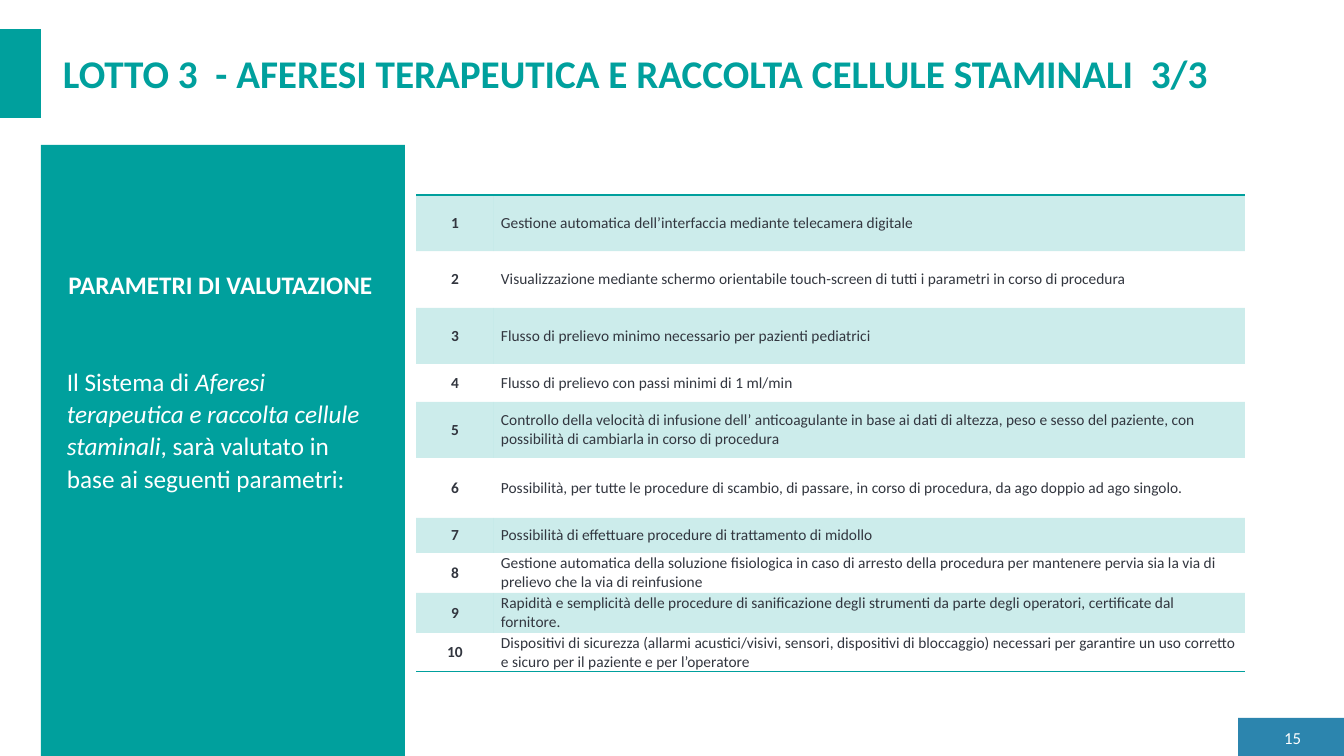
import pptx
import pptx.dml.color
import pptx.enum.shapes
import pptx.enum.text
import pptx.oxml
import pptx.oxml.ns
import pptx.util

SLIDE_WIDTH, SLIDE_HEIGHT = 1344, 756
EMU_PER_PX = 12192000 / SLIDE_WIDTH
TEAL, BLUE, WHITE, INK = "00A09D", "2C85AE", "FFFFFF", "32363F"
PLAIN_TABLE_STYLE = "{2D5ABB26-0587-4C30-8999-92F81FD0307C}"
ALIGN = pptx.enum.text.PP_ALIGN
MIDDLE = pptx.enum.text.MSO_ANCHOR.MIDDLE

PARAMETERS = [
    (56, "Gestione automatica dell’interfaccia mediante telecamera digitale"),
    (57, "Visualizzazione mediante schermo orientabile touch-screen di tutti i parametri in corso di procedura"),
    (56, "Flusso di prelievo minimo necessario per pazienti pediatrici"),
    (38, "Flusso di prelievo con passi minimi di 1 ml/min"),
    (56, "Controllo della velocità di infusione dell’ anticoagulante in base ai dati di altezza, peso e sesso "
         "del paziente, con possibilità di cambiarla in corso di procedura"),
    (60, "Possibilità, per tutte le procedure di scambio, di passare, in corso di procedura, "
         "da ago doppio ad ago singolo."),
    (35, "Possibilità di effettuare procedure di trattamento di midollo"),
    (40, "Gestione automatica della soluzione fisiologica in caso di arresto della procedura per mantenere "
         "pervia sia la via di prelievo che la via di reinfusione"),
    (40, "Rapidità e semplicità delle procedure di sanificazione degli strumenti da parte degli operatori, "
         "certificate dal fornitore."),
    (39, "Dispositivi di sicurezza (allarmi acustici/visivi, sensori, dispositivi di bloccaggio) necessari "
         "per garantire un uso corretto e sicuro per il paziente e per l’operatore"),
]


def px(length):
    return pptx.util.Emu(round(length * EMU_PER_PX))


def color(code):
    return pptx.dml.color.RGBColor.from_string(code)


def format_run(run, size, code, bold=False):
    run.font.name = "Calibri"
    run.font.size = pptx.util.Pt(size)
    run.font.color.rgb = color(code)
    run.font.bold = bold


def add_block(slide, left, top, width, height, code):
    block = slide.shapes.add_shape(
        pptx.enum.shapes.MSO_SHAPE.RECTANGLE, px(left), px(top), px(width), px(height))
    block.shadow.inherit = False
    block.fill.solid()
    block.fill.fore_color.rgb = color(code)
    block.line.fill.background()


def add_text(slide, left, top, width, height, pieces, size, code, bold=False, align=ALIGN.LEFT, wrap=True):
    frame = slide.shapes.add_textbox(px(left), px(top), px(width), px(height)).text_frame
    frame.word_wrap = wrap
    paragraph = frame.paragraphs[0]
    paragraph.alignment = align
    for piece in pieces:
        run = paragraph.add_run()
        run.text = piece
        format_run(run, size, code, bold)
    return frame


def add_rule(cell, side):
    rule = pptx.oxml.parse_xml(
        f'<a:{side} {pptx.oxml.ns.nsdecls("a")} w="12700"><a:solidFill>'
        f'<a:srgbClr val="{TEAL}"/></a:solidFill></a:{side}>')
    cell._tc.get_or_add_tcPr().insert(0, rule)


def tint(cell):
    cell.fill.solid()
    cell.fill.fore_color.rgb = color(TEAL)
    shade = cell._tc.tcPr.find(".//" + pptx.oxml.ns.qn("a:srgbClr"))
    shade.append(pptx.oxml.parse_xml(f'<a:alpha {pptx.oxml.ns.nsdecls("a")} val="20000"/>'))


def fill_cell(cell, text, margin, is_number):
    cell.margin_left = cell.margin_right = px(margin)
    cell.margin_top = cell.margin_bottom = 0
    cell.vertical_anchor = MIDDLE
    cell.text_frame.text = text
    paragraph = cell.text_frame.paragraphs[0]
    paragraph.space_after = pptx.util.Pt(10)
    if is_number:
        paragraph.alignment = ALIGN.CENTER
        paragraph.space_before = pptx.util.Pt(12)
    format_run(paragraph.runs[0], 11, INK, is_number)


def add_parameters(slide, left, top, widths):
    height = sum(row_height for row_height, _ in PARAMETERS)
    table = slide.shapes.add_table(
        len(PARAMETERS), len(widths), px(left), px(top), px(sum(widths)), px(height)).table
    table.first_row = table.horz_banding = False
    table._tbl.tblPr.find(pptx.oxml.ns.qn("a:tableStyleId")).text = PLAIN_TABLE_STYLE
    for column, width in zip(table.columns, widths):
        column.width = px(width)
    for index, (row_height, description) in enumerate(PARAMETERS):
        row = table.rows[index]
        row.height = px(row_height)
        number_cell, description_cell = row.cells
        fill_cell(number_cell, str(index + 1), 5, True)
        fill_cell(description_cell, description, 7, False)
        for cell in (number_cell, description_cell):
            if index % 2 == 0:
                tint(cell)
            else:
                cell.fill.background()
            if index == 0:
                add_rule(cell, "lnT")
            if index == len(PARAMETERS) - 1:
                add_rule(cell, "lnB")


def main():
    deck = pptx.Presentation()
    deck.slide_width, deck.slide_height = px(SLIDE_WIDTH), px(SLIDE_HEIGHT)
    slide = deck.slides.add_slide(deck.slide_layouts[6])

    add_block(slide, 1238, 718, 106, 38, BLUE)
    page_number = add_text(slide, 1270, 726, 41, 23, ["15"], 12, WHITE, align=ALIGN.RIGHT)
    page_number.vertical_anchor = MIDDLE

    add_block(slide, 41, 145, 364, 611, TEAL)
    introduction = add_text(
        slide, 57, 359, 331, 292,
        ["Il Sistema di ", "Aferesi terapeutica e raccolta cellule staminali",
         ", sarà valutato in base ai seguenti parametri:"], 18, WHITE)
    introduction.paragraphs[0].line_spacing = 1.07
    introduction.paragraphs[0].space_after = pptx.util.Pt(8)
    introduction.paragraphs[0].runs[1].font.italic = True

    heading = add_text(slide, 57, 264, 327, 103, ["PARAMETRI DI VALUTAZIONE"], 18, WHITE,
                       bold=True, align=ALIGN.CENTER, wrap=False)
    heading.paragraphs[0].space_before = pptx.util.Pt(12)
    heading.paragraphs[0].space_after = pptx.util.Pt(10)

    add_text(slide, 53, 44, 1241, 57,
             ["LOTTO 3  - AFERESI TERAPEUTICA E RACCOLTA CELLULE STAMINALI  3/3"], 28, TEAL, bold=True)
    add_parameters(slide, 416, 195, [78, 751])
    add_block(slide, 0, 29, 41, 89, TEAL)
    deck.save("out.pptx")


if __name__ == "__main__":
    main()
